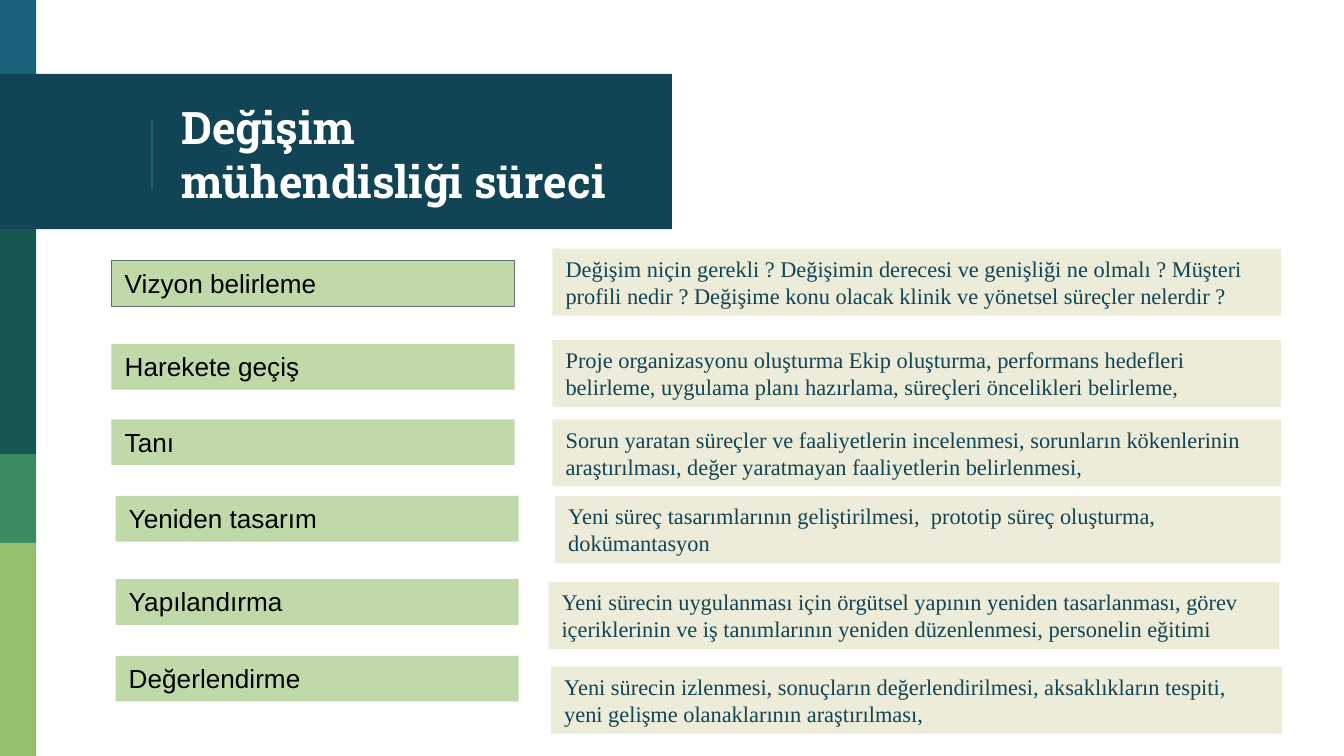
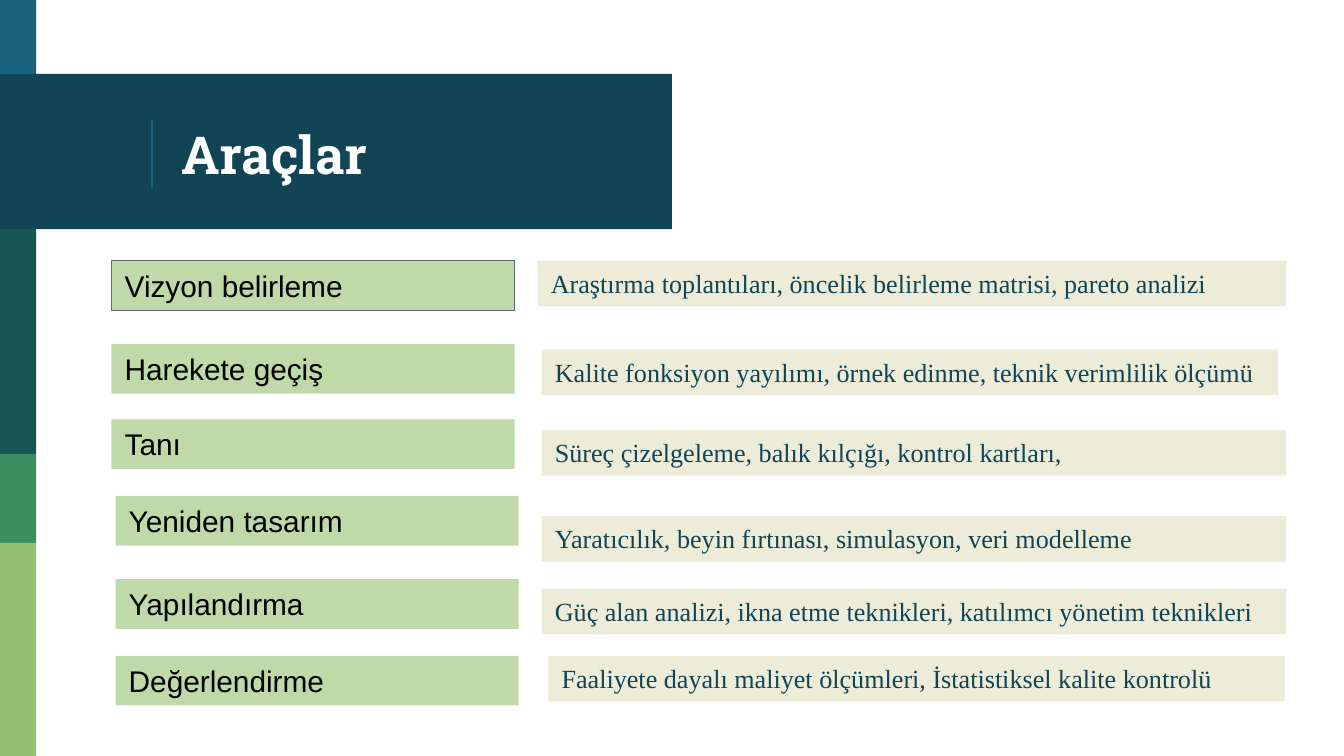
from lxml.etree import SubElement
from pptx import Presentation
from pptx.dml.color import RGBColor
from pptx.enum.shapes import MSO_CONNECTOR, MSO_SHAPE
from pptx.enum.text import MSO_ANCHOR, MSO_AUTO_SIZE, PP_ALIGN
from pptx.oxml.ns import qn
from pptx.util import Inches, Pt

WIDTH = Inches(10)
HEIGHT = WIDTH * 9 // 16
UNIT = WIDTH // 100

NAVY, BLUE, WHITE, BLACK = "114454", "18637B", "FFFFFF", "000000"
GREEN, CREAM, GREY = "BFD9A8", "ECECD8", "5F6C70"
BANDS = [
    (0, 0, 2.7, 5.8, BLUE),
    (0, 5.5, 50, 11.55, NAVY),
    (0, 17.05, 2.7, 16.75, "165751"),
    (0, 33.8, 2.7, 6.6, "3B8D61"),
    (0, 40.4, 2.7, 15.85, "94BF6E"),
]
TITLE_FRAME = {"vertical_anchor": MSO_ANCHOR.MIDDLE, "margin_left": UNIT, "margin_right": UNIT,
               "margin_top": UNIT, "margin_bottom": UNIT}
BOX_FRAME = {"vertical_anchor": MSO_ANCHOR.TOP, "auto_size": MSO_AUTO_SIZE.SHAPE_TO_FIT_TEXT}

STAGES = [
    (8.3, 19.4, "Vizyon belirleme"),
    (8.3, 25.6, "Harekete geçiş"),
    (8.3, 31.2, "Tanı"),
    (8.6, 36.9, "Yeniden tasarım"),
    (8.6, 43.1, "Yapılandırma"),
    (8.6, 48.8, "Değerlendirme"),
]
PROCESS = [
    (41.1, 18.5, 54.2, "Değişim niçin gerekli ? Değişimin derecesi ve genişliği ne olmalı ? Müşteri "
     "profili nedir ? Değişime konu olacak klinik ve yönetsel süreçler nelerdir ?"),
    (41.1, 25.3, 54.2, "Proje organizasyonu oluşturma Ekip oluşturma, performans hedefleri "
     "belirleme, uygulama planı hazırlama, süreçleri öncelikleri belirleme,"),
    (41.1, 31.2, 54.2, "Sorun yaratan süreçler ve faaliyetlerin incelenmesi, sorunların kökenlerinin "
     "araştırılması, değer yaratmayan faaliyetlerin belirlenmesi,"),
    (41.3, 36.9, 54, "Yeni süreç tasarımlarının geliştirilmesi,  prototip süreç oluşturma, "
     "dokümantasyon"),
    (40.8, 43.3, 54.4, "Yeni sürecin uygulanması için örgütsel yapının yeniden tasarlanması, görev "
     "içeriklerinin ve iş tanımlarının yeniden düzenlenmesi, personelin eğitimi"),
    (41, 49.6, 54.4, "Yeni sürecin izlenmesi, sonuçların değerlendirilmesi, aksaklıkların tespiti, "
     "yeni gelişme olanaklarının araştırılması,"),
]
TOOLS = [
    (40, 19.4, 55.7, "Araştırma toplantıları, öncelik belirleme matrisi, pareto analizi"),
    (40.3, 26, 54.8, "Kalite fonksiyon yayılımı, örnek edinme, teknik verimlilik ölçümü"),
    (40.3, 32, 55.4, "Süreç çizelgeleme, balık kılçığı, kontrol kartları,"),
    (40.3, 38.4, 55.4, "Yaratıcılık, beyin fırtınası, simulasyon, veri modelleme"),
    (40.3, 43.8, 55.4, "Güç alan analizi, ikna etme teknikleri, katılımcı yönetim teknikleri"),
    (40.8, 48.8, 54.8, "Faaliyete dayalı maliyet ölçümleri, İstatistiksel kalite kontrolü"),
]


def color(value):
    return RGBColor.from_string(value)


def grid(*cells):
    return [int(cell * UNIT) for cell in cells]


class Deck:
    """Holds the shared style and the current slide, on a grid 100 columns wide."""

    def __init__(self):
        self.presentation = Presentation()
        self.presentation.slide_width = WIDTH
        self.presentation.slide_height = HEIGHT
        self.slide = None

    def rectangle(self, left, top, width, height, fill, outline=None):
        shape = self.slide.shapes.add_shape(MSO_SHAPE.RECTANGLE, *grid(left, top, width, height))
        shape.shadow.inherit = False
        shape.fill.solid()
        shape.fill.fore_color.rgb = color(fill)
        if outline:
            shape.line.color.rgb = color(outline)
            shape.line.width = Pt(0.75)
        else:
            shape.line.fill.background()
        return shape

    def rule(self, column, top, bottom):
        line = self.slide.shapes.add_connector(MSO_CONNECTOR.STRAIGHT, *grid(column, top, column, bottom))
        line.line.color.rgb = color(BLUE)
        line.line.width = Pt(0.75)
        SubElement(line._element.spPr, qn("a:effectLst"))

    def add_text(self, shape, text, frame_format, name, size, ink, bold=False):
        frame = shape.text_frame
        frame.word_wrap = True
        for key, value in frame_format.items():
            setattr(frame, key, value)
        paragraph = frame.paragraphs[0]
        paragraph.alignment = PP_ALIGN.LEFT
        run = paragraph.add_run()
        run.text = text
        for key, value in {"name": name, "size": Pt(size), "bold": bold}.items():
            setattr(run.font, key, value)
        run.font.color.rgb = color(ink)

    def new_slide(self, title, size):
        self.slide = self.presentation.slides.add_slide(self.presentation.slide_layouts[6])
        for band in BANDS:
            self.rectangle(*band)
        self.rule(11.3, 8.9, 14)
        box = self.slide.shapes.add_textbox(*grid(12.5, 5.8, 35.1, 11.2))
        self.add_text(box, title, TITLE_FRAME, "Roboto Slab", size, WHITE, True)

    def stages(self, height, size):
        for index, (left, top, text) in enumerate(STAGES):
            shape = self.rectangle(left, top, 30, height, GREEN, None if index else GREY)
            self.add_text(shape, text, BOX_FRAME, "Arial", size, BLACK)

    def details(self, rows, height, size):
        for left, top, width, text in rows:
            shape = self.rectangle(left, top, width, height, CREAM)
            self.add_text(shape, text, BOX_FRAME, "Times New Roman", size, NAVY)


def main():
    deck = Deck()
    deck.new_slide("Değişim mühendisliği süreci", 24)
    deck.stages(3.4, 14)
    deck.details(PROCESS, 5, 12)
    deck.new_slide("Araçlar", 28)
    deck.stages(3.7, 16)
    deck.details(TOOLS, 3.4, 14)
    deck.presentation.save("out.pptx")


if __name__ == "__main__":
    main()
